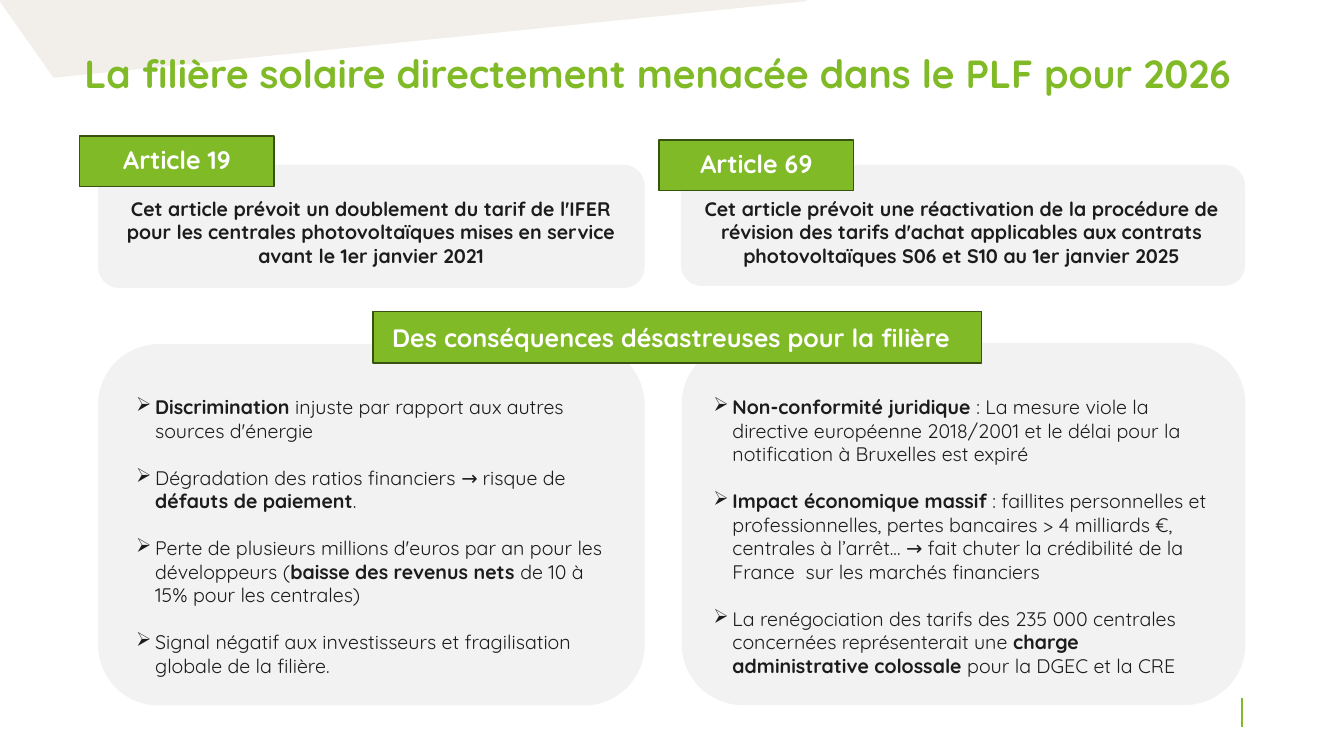
"""Builds the slide on the solar sector and the 2026 finance bill."""
from lxml.etree import SubElement
from pptx import Presentation
from pptx.dml.color import RGBColor
from pptx.enum.shapes import MSO_CONNECTOR, MSO_SHAPE
from pptx.enum.text import MSO_ANCHOR, PP_ALIGN
from pptx.oxml.ns import qn
from pptx.util import Cm, Pt

GREEN = RGBColor(0x80, 0xBA, 0x27)
DARK_GREEN = RGBColor(0x38, 0x52, 0x11)
GREY = RGBColor(0xF2, 0xF2, 0xF2)
BEIGE = RGBColor(0xF2, 0xEF, 0xEA)
INK = RGBColor(0x1C, 0x1C, 0x1C)
WHITE = RGBColor(0xFF, 0xFF, 0xFF)
FONT = "Quicksand"

TITLE = "La filière solaire directement menacée dans le PLF pour 2026"
BANNER = "Des conséquences désastreuses pour la filière"
ARTICLES = [
    {
        "label": "Article 19",
        "label_box": (2.01, 3.43, 4.9, 1.27),
        "summary": "Cet article prévoit un doublement du tarif de l'IFER pour les centrales "
                   "photovoltaïques mises en service avant le 1er janvier 2021",
        "summary_card": (2.49, 4.17, 13.74, 3.07),
        "summary_box": (2.84, 4.83, 13.03, 2.06),
        "effects": [
            [("Discrimination ", True), ("injuste par rapport aux autres sources d'énergie", False)],
            [("Dégradation des ratios financiers → risque de ", False),
             ("défauts de paiement", True), (".", False)],
            [("Perte de plusieurs millions d'euros par an pour les développeurs (", False),
             ("baisse des revenus nets ", True), ("de 10 à 15% pour les centrales)", False)],
            [("Signal négatif aux investisseurs et fragilisation globale de la filière.", False)],
        ],
        "effects_card": (2.49, 8.69, 13.74, 9.07),
        "effects_box": (3.18, 9.83, 12.45, 7.44),
    },
    {
        "label": "Article 69",
        "label_box": (16.61, 3.53, 4.9, 1.27),
        "summary": "Cet article prévoit une réactivation de la procédure de révision des tarifs "
                   "d'achat applicables aux contrats photovoltaïques S06 et S10 au 1er janvier 2025",
        "summary_card": (17.18, 4.17, 14.18, 3.02),
        "summary_box": (17.42, 4.83, 13.64, 2.06),
        "effects": [
            [("Non-conformité juridique", True),
             (" : La mesure viole la directive européenne 2018/2001 et le délai pour la "
              "notification à Bruxelles est expiré", False)],
            [("Impact économique massif", True),
             (" : faillites personnelles et professionnelles, pertes bancaires > 4 milliards €, "
              "centrales à l’arrêt... → fait chuter la crédibilité de la France  sur les "
              "marchés financiers", False)],
            [("La renégociation des tarifs des 235 000 centrales concernées représenterait une ", False),
             ("charge administrative colossale", True), (" pour la DGEC et la CRE", False)],
        ],
        "effects_card": (17.2, 8.66, 14.17, 9.09),
        "effects_box": (17.73, 9.83, 13.06, 7.44),
    },
]
TITLE_BOX = (1.88, 1.24, 30.68, 1.83)
BANNER_BOX = (9.4, 7.85, 15.34, 1.3)
CORNER = [(-0.03, 0), (1.35, 1.96), (20.32, 0.03), (20.35, -0.05)]
PAGE_MARK = [(31.29, 17.58), (31.29, 18.31)]


def lengths(values):
    return [Cm(value) for value in values]


def set_font(paragraph, size, color, bold=None):
    font = paragraph.font
    font.name, font.size, font.bold = FONT, Pt(size), bold
    font.color.rgb = color


def add_panel(slide, preset, box, fill, outline):
    panel = slide.shapes.add_shape(preset, *lengths(box))
    panel.shadow.inherit = False
    panel.fill.solid()
    panel.fill.fore_color.rgb = fill
    panel.line.color.rgb = outline
    panel.line.width = Pt(1)
    return panel


def add_card(slide, box):
    add_panel(slide, MSO_SHAPE.ROUNDED_RECTANGLE, box, GREY, GREY)


def write_line(frame, text, size, color, align, spacing=None):
    frame.word_wrap = True
    paragraph = frame.paragraphs[0]
    paragraph.text = text
    paragraph.alignment = align
    paragraph.line_spacing = spacing
    set_font(paragraph, size, color, True)


def add_tag(slide, box, text, align, spacing=None, inset=0.25):
    tag = add_panel(slide, MSO_SHAPE.RECTANGLE, box, GREEN, DARK_GREEN)
    frame = tag.text_frame
    frame.vertical_anchor = MSO_ANCHOR.MIDDLE
    frame.margin_left = Cm(inset)
    write_line(frame, text, 18, WHITE, align, spacing)


def add_text(slide, box, text, size, color, align, spacing=None):
    frame = slide.shapes.add_textbox(*lengths(box)).text_frame
    write_line(frame, text, size, color, align, spacing)


def add_effects(slide, box, effects):
    frame = slide.shapes.add_textbox(*lengths(box)).text_frame
    frame.word_wrap = True
    for index, effect in enumerate(effects):
        paragraph = frame.add_paragraph() if index else frame.paragraphs[0]
        if index:
            paragraph.space_before = Pt(16.8)
        properties = paragraph._p.get_or_add_pPr()
        properties.set("marL", str(Cm(0.48)))
        properties.set("indent", str(-Cm(0.48)))
        SubElement(properties, qn("a:buChar")).set("char", "➢")
        set_font(paragraph, 14, INK)
        for text, bold in effect:
            run = paragraph.add_run()
            run.text = text
            run.font.bold = bold


def add_decor(slide):
    start, *others = [lengths(point) for point in CORNER]
    builder = slide.shapes.build_freeform(*start)
    builder.add_line_segments(others)
    corner = builder.convert_to_shape()
    corner.shadow.inherit = False
    corner.fill.solid()
    corner.fill.fore_color.rgb = BEIGE
    corner.line.fill.background()
    top, bottom = PAGE_MARK
    mark = slide.shapes.add_connector(MSO_CONNECTOR.STRAIGHT, *lengths(top + bottom))
    mark.line.color.rgb = GREEN
    mark.line.width = Pt(1.5)
    SubElement(mark._element.spPr, qn("a:effectLst"))


def main():
    deck = Presentation()
    deck.slide_width, deck.slide_height = Cm(33.87), Cm(19.05)
    slide = deck.slides.add_slide(deck.slide_layouts[6])
    add_decor(slide)
    add_text(slide, TITLE_BOX, TITLE, 28, GREEN, PP_ALIGN.LEFT, 0.9)
    for article in ARTICLES:
        add_card(slide, article["summary_card"])
        add_tag(slide, article["label_box"], article["label"], PP_ALIGN.CENTER, 0.9)
        add_text(slide, article["summary_box"], article["summary"], 14, INK, PP_ALIGN.CENTER)
        add_card(slide, article["effects_card"])
        add_effects(slide, article["effects_box"], article["effects"])
    add_tag(slide, BANNER_BOX, BANNER, PP_ALIGN.LEFT, inset=0.48)
    deck.save("out.pptx")


if __name__ == "__main__":
    main()
